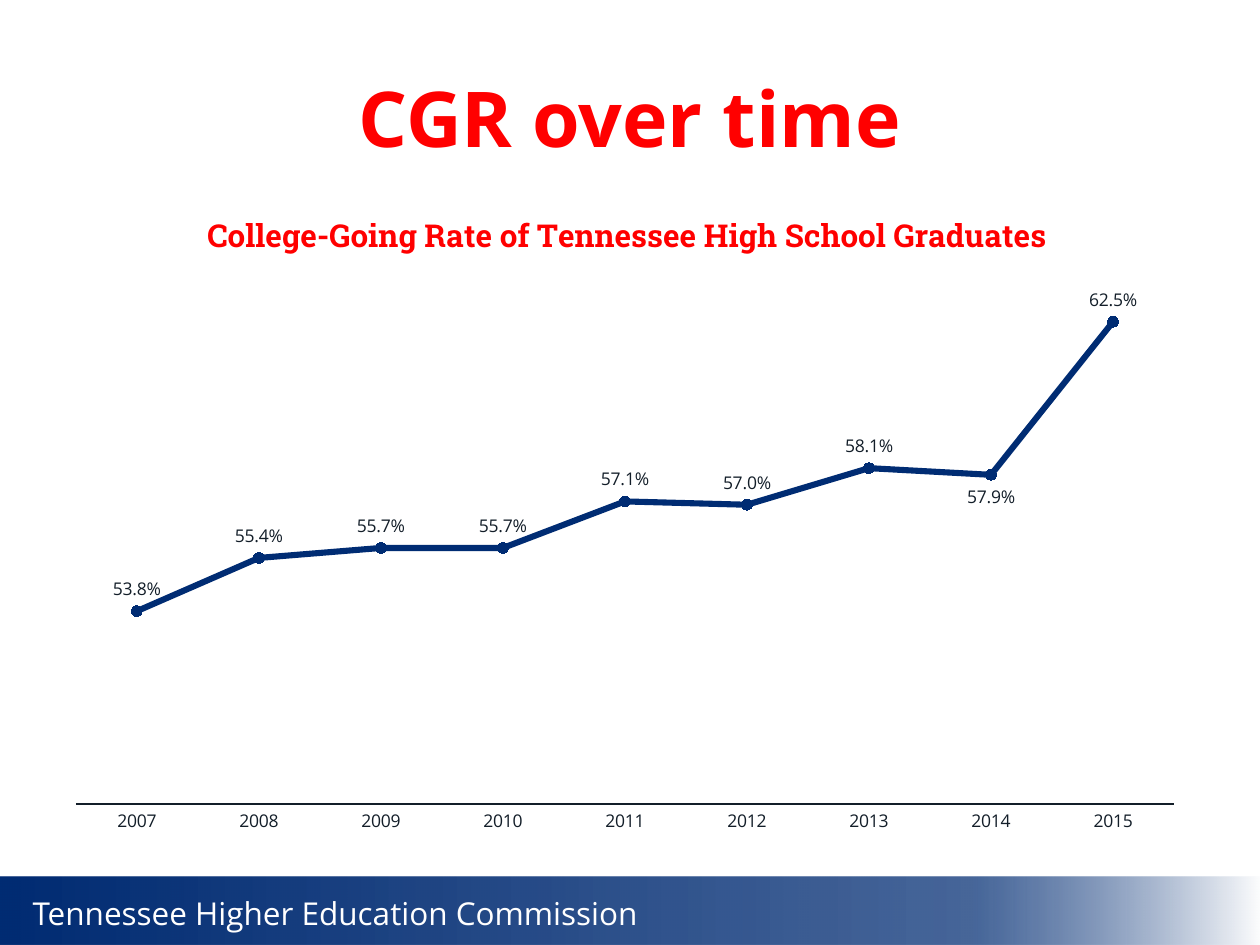
from dataclasses import dataclass

from lxml import etree
from pptx import Presentation
from pptx.chart.data import CategoryChartData
from pptx.dml.color import RGBColor
from pptx.enum.chart import (XL_CHART_TYPE, XL_LABEL_POSITION,
                             XL_MARKER_STYLE, XL_TICK_MARK)
from pptx.enum.shapes import MSO_SHAPE
from pptx.enum.text import MSO_ANCHOR, PP_ALIGN
from pptx.oxml.ns import qn
from pptx.util import Inches, Pt

LINE_MARKERS = XL_CHART_TYPE.LINE_MARKERS
ABOVE, BELOW = XL_LABEL_POSITION.ABOVE, XL_LABEL_POSITION.BELOW
CIRCLE = XL_MARKER_STYLE.CIRCLE
NO_TICK = XL_TICK_MARK.NONE
RECTANGLE = MSO_SHAPE.RECTANGLE
MIDDLE, TOP = MSO_ANCHOR.MIDDLE, MSO_ANCHOR.TOP
LEFT, CENTER = PP_ALIGN.LEFT, PP_ALIGN.CENTER


@dataclass(frozen=True)
class Theme:
    navy: str = "002C73"
    red: str = "FF0000"
    ink: str = "131E29"
    white: str = "FFFFFF"
    body_font: str = "Open Sans"
    chart_title_font: str = "Roboto Slab"
    title_size: int = 44
    heading_size: int = 18
    label_size: int = 10


@dataclass(frozen=True)
class TextSpot:
    text: str
    box: tuple[float, float, float, float]
    size: int
    color: str
    bold: bool = False
    align: PP_ALIGN = LEFT
    anchor: MSO_ANCHOR = TOP
    wrap: bool = True


THEME = Theme()
TEXTS = [
    TextSpot("Tennessee Higher Education Commission", (0.16, 7.05, 5.05, 0.4),
             THEME.heading_size, THEME.white, wrap=False),
    TextSpot("CGR over time", (0.5, 0.3, 9, 1.25), THEME.title_size, THEME.red,
             bold=True, align=CENTER, anchor=MIDDLE),
]
FIRST_YEAR = 2007
RATES = [0.538, 0.554, 0.557, 0.557, 0.571, 0.57, 0.581, 0.579, 0.625]
LABEL_BELOW_YEAR = 2014


def style_font(font, name: str, size: int, color: str, bold: bool = False) -> None:
    for attribute, value in {"name": name, "size": Pt(size), "bold": bold}.items():
        setattr(font, attribute, value)
    font.color.rgb = RGBColor.from_string(color)


def add_text(slide, spot: TextSpot) -> None:
    frame = slide.shapes.add_textbox(*map(Inches, spot.box)).text_frame
    frame.word_wrap = spot.wrap
    frame.vertical_anchor = spot.anchor
    paragraph = frame.paragraphs[0]
    paragraph.alignment = spot.align
    run = paragraph.add_run()
    run.text = spot.text
    style_font(run.font, THEME.body_font, spot.size, spot.color, spot.bold)


def add_footer_band(slide) -> None:
    band = slide.shapes.add_shape(
        RECTANGLE, *map(Inches, (0, 6.96, 10.02, 0.54)))
    band.shadow.inherit = False
    band.line.fill.background()
    band.fill.gradient()
    band.fill.gradient_angle = 0
    # Three stops, the middle one partly transparent
    stops = band.fill._fill._gradFill.find(qn("a:gsLst"))
    for stop in list(stops):
        stops.remove(stop)
    for percent, color, opacity in ((0, THEME.navy, 100), (77, THEME.navy, 72),
                                    (100, THEME.white, 100)):
        stop = etree.SubElement(stops, qn("a:gs"), pos=str(percent * 1000))
        tint = etree.SubElement(stop, qn("a:srgbClr"), val=color)
        if opacity < 100:
            etree.SubElement(tint, qn("a:alpha"), val=str(opacity * 1000))


def place(element, **parts: float | str) -> None:
    """Fix a chart part's place, in fractions of the chart."""
    layout = element.find(qn("c:layout"))
    if layout is None:
        layout = etree.Element(qn("c:layout"))
        text = element.find(qn("c:tx"))
        element.insert(0 if text is None else element.index(text) + 1, layout)
    for child in list(layout):
        layout.remove(child)
    manual = etree.SubElement(layout, qn("c:manualLayout"))
    for tag, value in parts.items():
        etree.SubElement(manual, qn(f"c:{tag}"), val=str(value))


def add_rate_chart(slide) -> None:
    data = CategoryChartData(number_format="0.0%")
    data.categories = [str(FIRST_YEAR + i) for i in range(len(RATES))]
    data.add_series("Series 1", RATES)
    chart = slide.shapes.add_chart(
        LINE_MARKERS, *map(Inches, (0.42, 1.42, 9.08, 5.28)), data).chart
    chart.has_legend = False
    style_font(chart.font, THEME.body_font, THEME.label_size, THEME.ink)

    # Chart title
    chart.has_title = True
    heading = chart.chart_title.text_frame.paragraphs[0].add_run()
    heading.text = "College-Going Rate of Tennessee High School Graduates"
    style_font(heading.font, THEME.chart_title_font, THEME.heading_size,
               THEME.red, bold=True)
    chart.chart_title.include_in_layout = False
    place(chart.chart_title._element, xMode="edge", yMode="edge", x=0.13, y=0.04)
    place(chart.plots[0]._element.getparent(), layoutTarget="inner",
          xMode="edge", yMode="edge", x=0.02, y=0.14, w=0.96, h=0.8)

    # Axes
    years, rates = chart.category_axis, chart.value_axis
    years.major_tick_mark = NO_TICK
    years.format.line.color.rgb = RGBColor.from_string(THEME.ink)
    years.format.line.width = Pt(0.75)
    for attribute, value in {"minimum_scale": 0.48, "maximum_scale": 0.64,
                             "has_major_gridlines": False,
                             "visible": False}.items():
        setattr(rates, attribute, value)

    # Line, markers and labels
    plot = chart.plots[0]
    plot.vary_by_categories = False
    series = plot.series[0]
    series.smooth = False
    navy = RGBColor.from_string(THEME.navy)
    series.format.line.color.rgb = navy
    series.format.line.width = Pt(3.5)
    series.marker.style = CIRCLE
    series.marker.size = 6
    series.marker.format.fill.solid()
    series.marker.format.fill.fore_color.rgb = navy
    series.marker.format.line.color.rgb = navy
    labels = series.data_labels
    for attribute, value in {"show_value": True, "position": ABOVE,
                             "number_format": "0.0%",
                             "number_format_is_linked": False}.items():
        setattr(labels, attribute, value)
    style_font(labels.font, THEME.body_font, THEME.label_size, THEME.ink)
    low_label = series.points[LABEL_BELOW_YEAR - FIRST_YEAR].data_label
    low_label.position = BELOW
    style_font(low_label.font, THEME.body_font, THEME.label_size, THEME.ink)


def main() -> None:
    deck = Presentation()
    deck.slide_width, deck.slide_height = Inches(10), Inches(7.5)
    slide = deck.slides.add_slide(deck.slide_layouts[6])
    add_footer_band(slide)
    for spot in TEXTS:
        add_text(slide, spot)
    add_rate_chart(slide)
    deck.save("out.pptx")


if __name__ == "__main__":
    main()
